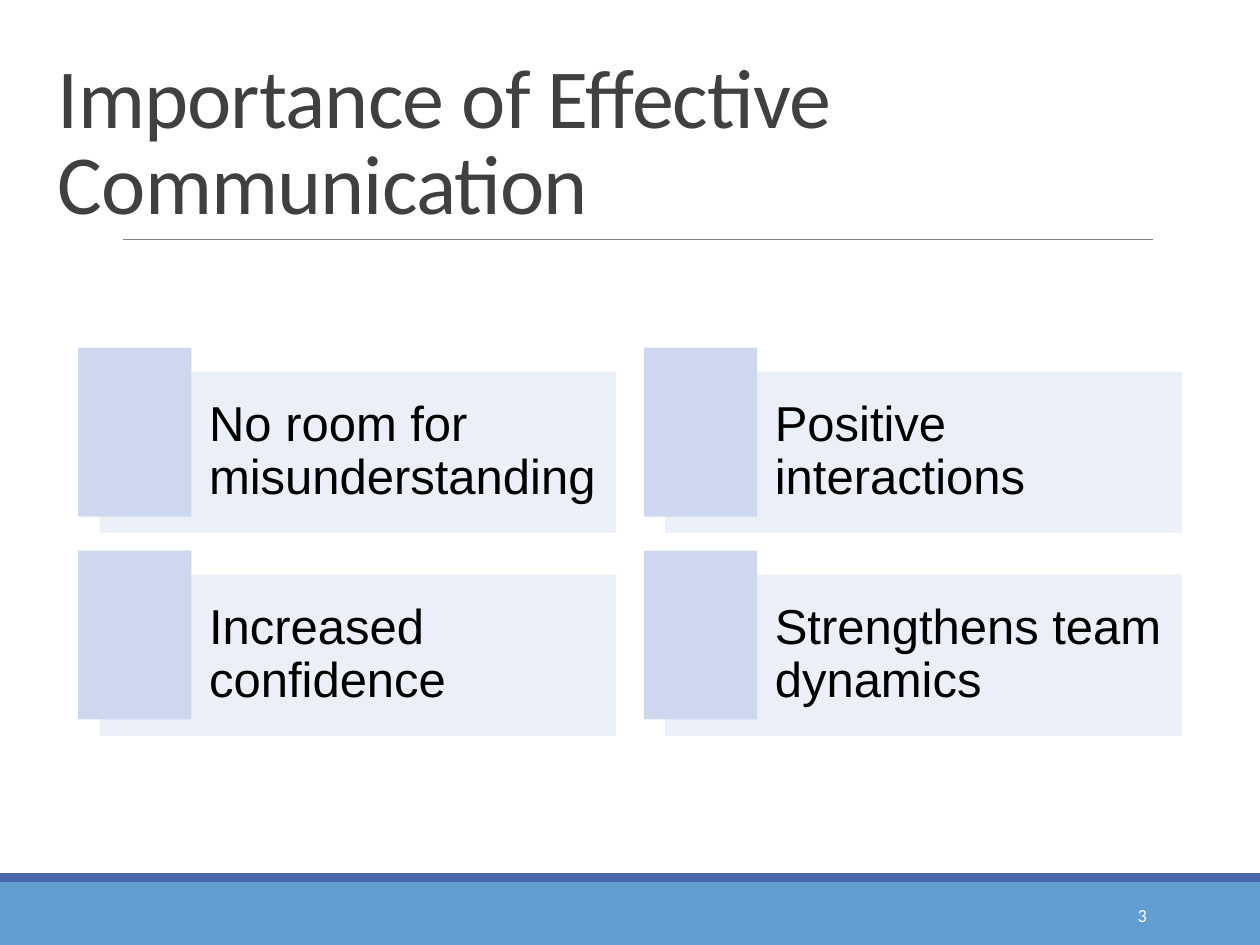
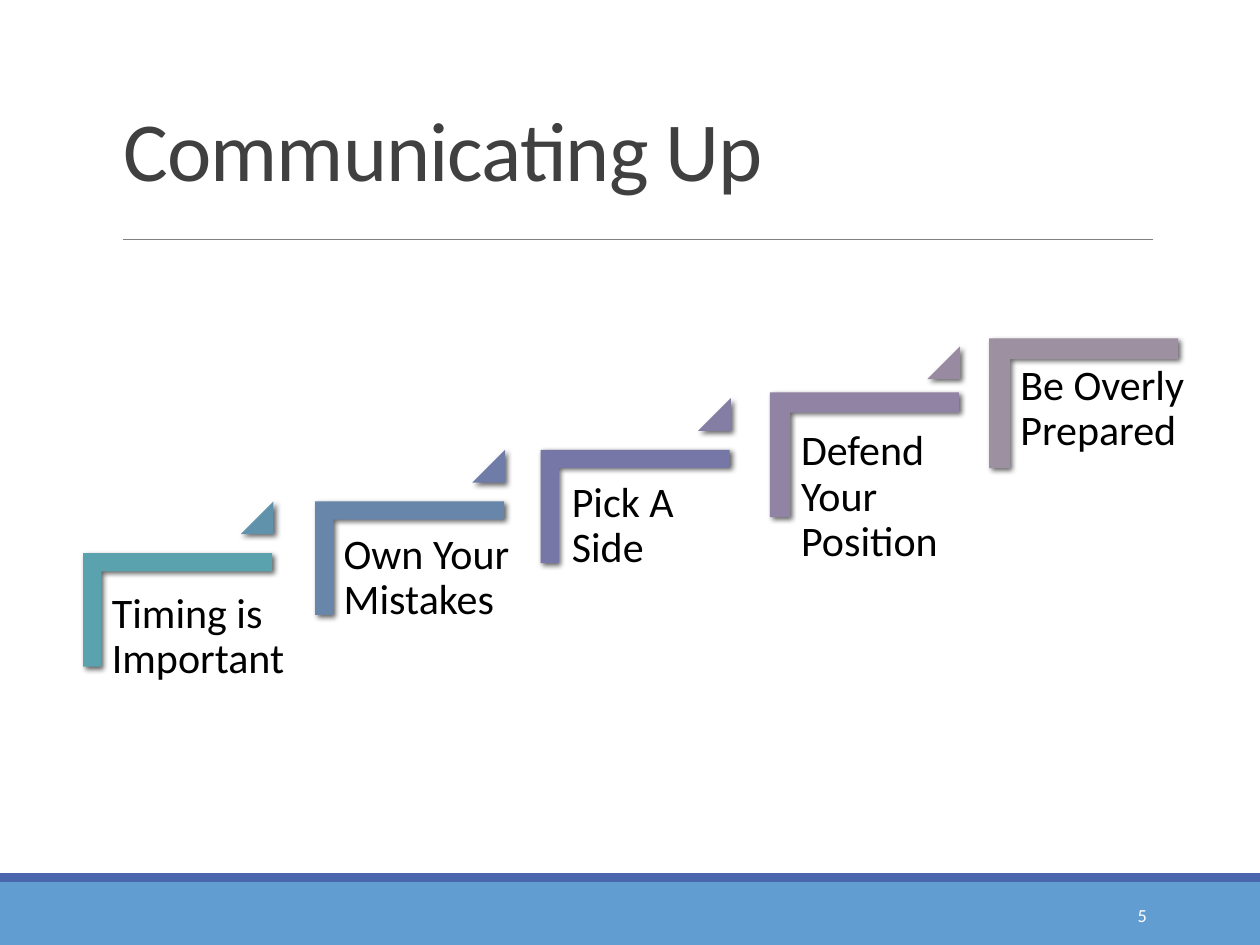
from dataclasses import dataclass

from lxml.etree import SubElement
from pptx import Presentation
from pptx.dml.color import RGBColor
from pptx.enum.shapes import MSO_CONNECTOR, MSO_SHAPE as Preset
from pptx.enum.text import MSO_ANCHOR as Anchor, MSO_AUTO_SIZE as AutoSize, PP_ALIGN as Align
from pptx.oxml.ns import qn
from pptx.shapes.autoshape import Shape
from pptx.slide import Slide
from pptx.util import Inches, Pt

WHITE, BLACK = "FFFFFF", "000000"
TITLE_GREY, RULE_GREY = "404040", "808080"
BAND_BLUE, BAND_EDGE = "629DD1", "4A66AC"
CARD_BLUE = "CDD8EF"
HEADING_FONT, CARD_FONT = "Calibri", "Arial"


@dataclass(frozen=True)
class Area:
    """A rectangle on the slide, in inches."""
    left: float
    top: float
    width: float
    height: float

    def lengths(self) -> tuple[Inches, ...]:
        """Return the position and size as lengths."""
        return tuple(Inches(v) for v in (self.left, self.top, self.width, self.height))


@dataclass(frozen=True)
class TextStyle:
    """How a block of text looks."""
    size: float
    font: str
    color: str
    anchor: Anchor = Anchor.TOP
    align: Align = Align.LEFT
    line_spacing: float = 1.0
    tracking: int = 0


@dataclass(frozen=True)
class Step:
    """One stair: its label, label area, bracket and the pointer after it."""
    label: str
    label_left: float
    label_top: float
    label_width: float
    center: float
    depth: float
    color: str
    pointer_color: str | None = None


TITLE = TextStyle(48, HEADING_FONT, TITLE_GREY, Anchor.BOTTOM, line_spacing=0.85, tracking=-50)
NUMBER = TextStyle(10.5, HEADING_FONT, WHITE, Anchor.MIDDLE, Align.RIGHT)
CARD = TextStyle(28, CARD_FONT, BLACK, Anchor.MIDDLE, line_spacing=0.9)
STEP = TextStyle(24, HEADING_FONT, BLACK, line_spacing=0.9)

REASONS = ["No room for misunderstanding", "Positive interactions",
           "Increased confidence", "Strengthens team dynamics"]

STEPS = [
    Step("Timing is Important", 0.79, 4.6, 1.66, 1.41, 0.9, "5AA2AE", "6192AC"),
    Step("Own Your Mistakes", 2.63, 4.13, 1.7, 3.25, 0.9, "6885AA", "6F7CA8"),
    Step("Pick A Side", 4.44, 3.72, 1.36, 5.04, 0.9, "7677A6", "847DA4"),
    Step("Defend Your Position", 6.26, 3.31, 1.36, 6.86, 0.99, "9083A3", "988AA1"),
    Step("Be Overly Prepared", 8, 2.79, 1.52, 8.6, 1.03, "9D90A0"),
]


def rgb(color: str) -> RGBColor:
    """Turn a hex string into a colour."""
    return RGBColor.from_string(color)


def write(box: Shape, text: str, style: TextStyle,
          insets: tuple[float, ...] = (0.1, 0.05, 0.1, 0.05)) -> None:
    """Fill a box with one paragraph of styled text."""
    frame = box.text_frame
    frame.text = text
    frame.word_wrap = True
    frame.auto_size = AutoSize.NONE
    frame.vertical_anchor = style.anchor
    (frame.margin_left, frame.margin_top,
     frame.margin_right, frame.margin_bottom) = (Inches(v) for v in insets)
    para = frame.paragraphs[0]
    para.alignment = style.align
    para.line_spacing = style.line_spacing
    span = para.runs[0]
    span.font.size = Pt(style.size)
    span.font.name = style.font
    span.font.color.rgb = rgb(style.color)
    if style.tracking:
        span.font._element.set("spc", str(style.tracking))


def add_block(slide: Slide, preset: Preset, area: Area, color: str) -> Shape:
    """Add a plain filled shape without outline or shadow."""
    block = slide.shapes.add_shape(preset, *area.lengths())
    block.fill.solid()
    block.fill.fore_color.rgb = rgb(color)
    block.line.fill.background()
    block.shadow.inherit = False
    return block


def set_opacity(block: Shape, percent: int) -> None:
    """Make a solid fill partly transparent."""
    color = block._element.spPr.find(qn("a:solidFill"))[0]
    SubElement(color, qn("a:alpha"), val=str(percent * 1000))


def cast_shadow(block: Shape) -> None:
    """Give a shape a soft shadow towards the lower right."""
    effects = block._element.spPr.find(qn("a:effectLst"))
    shadow = SubElement(effects, qn("a:outerShdw"), blurRad=str(Pt(3)), dist=str(Pt(2)),
                        dir=str(45 * 60000), rotWithShape="0")
    color = SubElement(shadow, qn("a:srgbClr"), val=BLACK)
    SubElement(color, qn("a:alpha"), val="60000")


def add_text(slide: Slide, area: Area, text: str, style: TextStyle, inset: float = 0.05) -> None:
    """Add a text box."""
    box = slide.shapes.add_textbox(*area.lengths())
    write(box, text, style, (0.1, inset, 0.1, inset))


def add_page(deck: Presentation, title: str, title_area: Area, number: int) -> Slide:
    """Add a slide with title, rule, bottom bands and page number."""
    page = deck.slides.add_slide(deck.slide_layouts[5])
    add_block(page, Preset.RECTANGLE, Area(0, 7, 10, 0.5), BAND_BLUE)
    add_block(page, Preset.RECTANGLE, Area(0, 6.93, 10, 0.07), BAND_EDGE)
    rule = page.shapes.add_connector(MSO_CONNECTOR.STRAIGHT, Inches(0.98), Inches(1.9),
                                     Inches(9.15), Inches(1.9))
    rule.line.color.rgb = rgb(RULE_GREY)
    rule.line.width = Pt(0.5)
    SubElement(rule._element.spPr, qn("a:effectLst"))
    heading = page.shapes.title
    heading.left, heading.top, heading.width, heading.height = title_area.lengths()
    write(heading, title, TITLE)
    add_text(page, Area(8.12, 7.06, 1.08, 0.4), str(number), NUMBER)
    return page


def add_reason(page: Slide, index: int, reason: str) -> None:
    """Add a pale card with an accent block, placed in a two-column grid."""
    row, column = divmod(index, 2)
    left, top = 0.62 + column * 4.49, 2.76 + row * 1.61
    card = add_block(page, Preset.RECTANGLE, Area(left + 0.17, top + 0.19, 4.1, 1.28), CARD_BLUE)
    set_opacity(card, 40)
    write(card, reason, CARD, (0.87, 0.12, 0.12, 0.12))
    add_block(page, Preset.RECTANGLE, Area(left, top, 0.9, 1.34), CARD_BLUE)


def add_step(page: Slide, index: int, step: Step) -> None:
    """Add a stair bracket, its label and the pointer to the next stair."""
    top = 4.09 - index * 0.41
    bracket_area = Area(step.center - step.depth / 2, top, step.depth, 1.5)
    bracket = add_block(page, Preset.CORNER, bracket_area, step.color)
    bracket.rotation = 90
    bracket.adjustments[0] = bracket.adjustments[1] = 0.161
    cast_shadow(bracket)
    label_area = Area(step.label_left, step.label_top, step.label_width, 1.19)
    add_text(page, label_area, step.label, STEP, 0.1)
    if step.pointer_color:
        pointer_area = Area(step.center + 0.5, top - 0.11, 0.26, 0.26)
        pointer = add_block(page, Preset.ISOSCELES_TRIANGLE, pointer_area, step.pointer_color)
        pointer.adjustments[0] = 1
        cast_shadow(pointer)


def main() -> None:
    """Build and save the deck."""
    deck = Presentation()
    deck.slide_width, deck.slide_height = Inches(10), Inches(7.5)

    importance = add_page(deck, "Importance of Effective Communication",
                          Area(0.36, 0.13, 8.5, 1.76), 3)
    for index, reason in enumerate(REASONS):
        add_reason(importance, index, reason)

    upward = add_page(deck, "Communicating Up", Area(0.88, 0.04, 8.25, 1.59), 5)
    for index, step in enumerate(STEPS):
        add_step(upward, index, step)

    deck.save("out.pptx")


if __name__ == "__main__":
    main()
